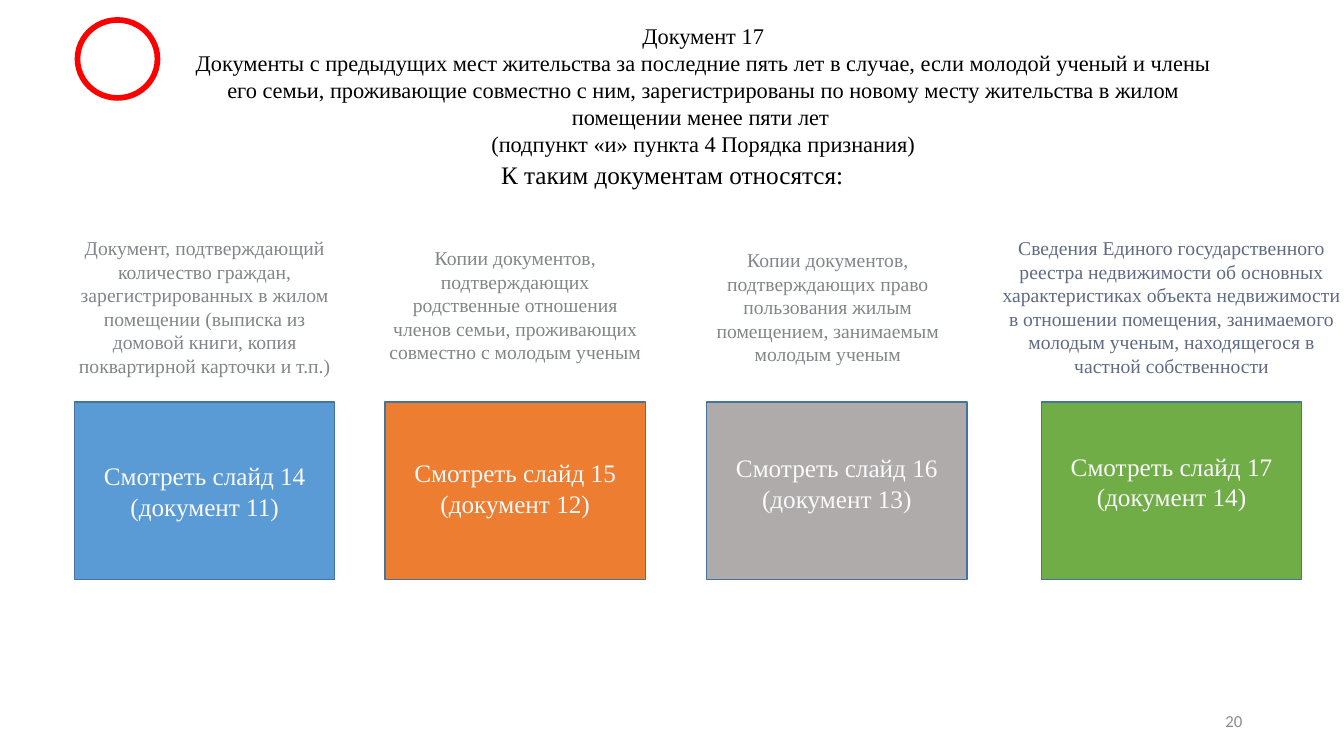
"""Build the slide listing documents from previous places of residence."""
from dataclasses import dataclass

from pptx import Presentation
from pptx.dml.color import RGBColor
from pptx.enum.shapes import MSO_SHAPE
from pptx.enum.text import MSO_ANCHOR, MSO_AUTO_SIZE, PP_ALIGN
from pptx.shapes.autoshape import Shape
from pptx.slide import Slide
from pptx.util import Inches, Pt

CENTER, RIGHT = PP_ALIGN.CENTER, PP_ALIGN.RIGHT
TOP, MIDDLE = MSO_ANCHOR.TOP, MSO_ANCHOR.MIDDLE
RECTANGLE, DONUT = MSO_SHAPE.RECTANGLE, MSO_SHAPE.DONUT
NO_AUTOFIT = MSO_AUTO_SIZE.NONE
TITLE_ONLY = 5


@dataclass(frozen=True)
class Theme:
    """Colours, fonts and type sizes of the slide."""

    font: str = "Times New Roman"
    number_font: str = "Calibri"
    text: str = "000000"
    description: str = "828589"
    registry: str = "606B83"
    label: str = "FAF9FC"
    number: str = "8C8C8C"
    outline: str = "43739E"
    ring: str = "FF0000"
    blue: str = "5B9BD5"
    orange: str = "ED7D31"
    gray: str = "AFABAB"
    green: str = "70AD47"
    title_size: int = 16
    large_size: int = 18
    description_size: int = 14
    number_size: int = 12


@dataclass(frozen=True)
class Box:
    """Position and size in inches."""

    left: float
    top: float
    width: float
    height: float

    def lengths(self) -> tuple[Inches, Inches, Inches, Inches]:
        """Return the box as slide lengths."""
        return Inches(self.left), Inches(self.top), Inches(self.width), Inches(self.height)


@dataclass(frozen=True)
class Card:
    """A coloured block with a label and the description above it."""

    left: float
    fill: str
    number: int
    label_center: float
    description: str
    description_box: Box
    description_color: str


THEME = Theme()
CARD_TOP, CARD_WIDTH, CARD_HEIGHT = 3.99, 2.58, 1.76
LABEL_HEIGHT = 0.6
DOCUMENT_OFFSET = 3

TITLE = "\n".join((
    "Документ 17",
    "Документы с предыдущих мест жительства за последние пять лет в случае, если молодой ученый "
    "и члены его семьи, проживающие совместно с ним, зарегистрированы по новому месту жительства "
    "в жилом помещении менее пяти лет ",
    "(подпункт «и» пункта 4 Порядка признания)",
))

CARDS = (
    Card(0.74, THEME.blue, 14, 4.87,
         "Документ, подтверждающий количество граждан, зарегистрированных в жилом помещении "
         "(выписка из домовой книги, копия поквартирной карточки и т.п.)",
         Box(0.74, 2.34, CARD_WIDTH, 1.41), THEME.description),
    Card(3.82, THEME.orange, 15, 4.84,
         "Копии документов, подтверждающих родственные отношения членов семьи, проживающих "
         "совместно с молодым ученым",
         Box(3.82, 2.44, CARD_WIDTH, 1.18), THEME.description),
    Card(7.01, THEME.gray, 16, 4.79,
         "Копии документов, подтверждающих право пользования жилым помещением, занимаемым "
         "молодым ученым",
         Box(6.92, 2.46, CARD_WIDTH, 1.18), THEME.description),
    Card(10.33, THEME.green, 17, 4.78,
         "Сведения Единого государственного реестра недвижимости об основных характеристиках "
         "объекта недвижимости в отношении помещения, занимаемого молодым ученым, находящегося "
         "в частной собственности",
         Box(9.94, 2.34, 3.36, 1.41), THEME.registry),
)


def write_text(shape: Shape, text: str, size: int, color: str, font: str = THEME.font,
               align: PP_ALIGN = CENTER, anchor: MSO_ANCHOR = TOP, inset: bool = True) -> None:
    """Fill a shape with uniformly formatted text."""
    text_frame = shape.text_frame
    text_frame.text = text
    text_frame.word_wrap = True
    text_frame.auto_size = NO_AUTOFIT
    text_frame.vertical_anchor = anchor
    if not inset:
        text_frame.margin_left = text_frame.margin_right = 0
        text_frame.margin_top = text_frame.margin_bottom = 0
    for paragraph in text_frame.paragraphs:
        paragraph.alignment = align
        for run in paragraph.runs:
            run.font.name = font
            run.font.size = Pt(size)
            run.font.color.rgb = RGBColor.from_string(color)


def add_text(slide: Slide, box: Box) -> Shape:
    """Add an empty text box."""
    return slide.shapes.add_textbox(*box.lengths())


def add_filled_shape(slide: Slide, kind: MSO_SHAPE, box: Box, fill: str) -> Shape:
    """Add a flat filled shape without an outline."""
    shape = slide.shapes.add_shape(kind, *box.lengths())
    shape.shadow.inherit = False
    shape.fill.solid()
    shape.fill.fore_color.rgb = RGBColor.from_string(fill)
    shape.line.fill.background()
    return shape


def add_card(slide: Slide, card: Card) -> None:
    """Draw a block, its label and its description."""
    block = add_filled_shape(slide, RECTANGLE,
                             Box(card.left, CARD_TOP, CARD_WIDTH, CARD_HEIGHT), card.fill)
    block.line.color.rgb = RGBColor.from_string(THEME.outline)
    block.line.width = Pt(1)
    label = add_text(slide, Box(card.left, card.label_center - LABEL_HEIGHT / 2,
                                CARD_WIDTH, LABEL_HEIGHT))
    write_text(label,
               f"Смотреть слайд {card.number}\n(документ {card.number - DOCUMENT_OFFSET})",
               THEME.large_size, THEME.label, anchor=MIDDLE, inset=False)
    description = add_text(slide, card.description_box)
    write_text(description, card.description, THEME.description_size,
               card.description_color, inset=False)


def main() -> None:
    """Build and save the presentation."""
    presentation = Presentation()
    presentation.slide_width, presentation.slide_height = Inches(13.33), Inches(7.5)
    slide = presentation.slides.add_slide(presentation.slide_layouts[TITLE_ONLY])

    title = slide.shapes.title
    title.left, title.top, title.width, title.height = Box(1.67, 0.17, 10.61, 1.48).lengths()
    write_text(title, TITLE, THEME.title_size, THEME.text)

    for card in CARDS:
        add_card(slide, card)

    ring = add_filled_shape(slide, DONUT, Box(0.74, 0.17, 0.85, 0.83), THEME.ring)
    ring.adjustments[0] = 0.068

    subtitle = add_text(slide, Box(1.7, 1.53, 10, 0.4))
    write_text(subtitle, "К таким документам относятся: ", THEME.large_size, THEME.text)

    slide_number = add_text(slide, Box(9.42, 6.95, 3, 0.4))
    write_text(slide_number, "20", THEME.number_size, THEME.number, THEME.number_font,
               RIGHT, MIDDLE)

    presentation.save("out.pptx")


if __name__ == "__main__":
    main()
